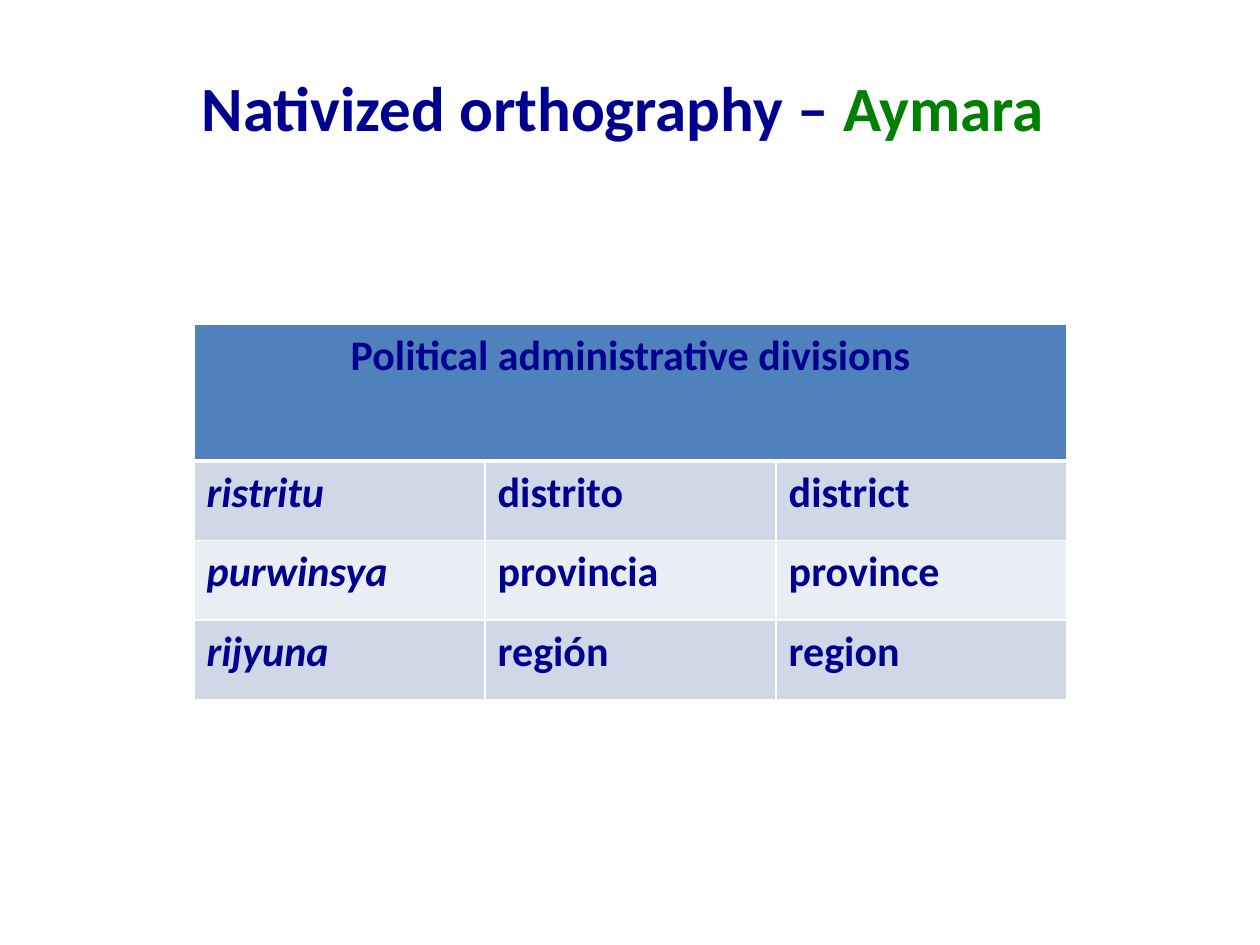
from dataclasses import dataclass

from lxml.etree import SubElement
from pptx import Presentation
from pptx.dml.color import RGBColor
from pptx.enum.text import MSO_ANCHOR, PP_ALIGN
from pptx.oxml.ns import qn
from pptx.table import Table, _Cell
from pptx.text.text import _Paragraph
from pptx.util import Inches, Pt

NAVY = RGBColor(0x00, 0x00, 0x90)
GREEN = RGBColor(0x00, 0x80, 0x00)
WHITE = RGBColor(0xFF, 0xFF, 0xFF)
HEADER_BLUE = RGBColor(0x4F, 0x81, 0xBD)
BAND_DARK = RGBColor(0xD0, 0xD8, 0xE8)
BAND_LIGHT = RGBColor(0xE9, 0xED, 0xF4)
BANDS = (BAND_DARK, BAND_LIGHT)

COLUMN_WIDTH = 2.31
HEADER_HEIGHT = 1.09
ROW_HEIGHT = 0.63


@dataclass(frozen=True)
class Division:
    aymara: str
    spanish: str
    english: str


DIVISIONS = (
    Division("ristritu", "distrito", "district"),
    Division("purwinsya", "provincia", "province"),
    Division("rijyuna", "región", "region"),
)


def add_text(paragraph: _Paragraph, text: str, *, size: float = 24,
             color: RGBColor = NAVY, italic: bool = False,
             align: PP_ALIGN = PP_ALIGN.LEFT) -> None:
    paragraph.alignment = align
    run = paragraph.add_run()
    run.text = text
    run.font.name = "Calibri"
    run.font.size = Pt(size)
    run.font.bold = True
    run.font.italic = italic
    run.font.color.rgb = color


def style_cell(cell: _Cell, fill: RGBColor, top: float = 1, bottom: float = 1) -> None:
    properties = cell._tc.get_or_add_tcPr()
    for side, width in (("L", 1), ("R", 1), ("T", top), ("B", bottom)):
        border = SubElement(properties, qn(f"a:ln{side}"), w=str(Pt(width)))
        border_fill = SubElement(border, qn("a:solidFill"))
        SubElement(border_fill, qn("a:srgbClr"), val=str(WHITE))
    cell.fill.solid()
    cell.fill.fore_color.rgb = fill


def fill_header(table: Table, heading: str) -> None:
    table.rows[0].height = Inches(HEADER_HEIGHT)
    for cell in table.rows[0].cells:
        style_cell(cell, HEADER_BLUE, bottom=3)
    header = table.cell(0, 0)
    header.merge(table.cell(0, 2))
    add_text(header.text_frame.paragraphs[0], heading, align=PP_ALIGN.CENTER)


def fill_division(table: Table, row: int, division: Division) -> None:
    table.rows[row].height = Inches(ROW_HEIGHT)
    words = (division.aymara, division.spanish, division.english)
    for column, word in enumerate(words):
        cell = table.cell(row, column)
        style_cell(cell, BANDS[(row - 1) % 2], top=3 if row == 1 else 1)
        add_text(cell.text_frame.paragraphs[0], word, italic=column == 0)


def main() -> None:
    presentation = Presentation()
    presentation.slide_width = Inches(10)
    presentation.slide_height = Inches(7.5)
    slide = presentation.slides.add_slide(presentation.slide_layouts[5])

    title = slide.shapes.title
    title.left, title.top = Inches(0.5), Inches(0.22)
    title.width, title.height = Inches(9), Inches(1.25)
    title.text_frame.vertical_anchor = MSO_ANCHOR.MIDDLE
    heading = title.text_frame.paragraphs[0]
    add_text(heading, "Nativized orthography – ", size=36, align=PP_ALIGN.CENTER)
    add_text(heading, "Aymara ", size=36, color=GREEN, align=PP_ALIGN.CENTER)

    divisions_table = slide.shapes.add_table(
        len(DIVISIONS) + 1, 3, Inches(1.54), Inches(2.57),
        Inches(3 * COLUMN_WIDTH),
        Inches(HEADER_HEIGHT + len(DIVISIONS) * ROW_HEIGHT)).table
    for column in divisions_table.columns:
        column.width = Inches(COLUMN_WIDTH)
    fill_header(divisions_table, "Political administrative divisions")
    for row, division in enumerate(DIVISIONS, start=1):
        fill_division(divisions_table, row, division)

    presentation.save("out.pptx")


if __name__ == "__main__":
    main()
